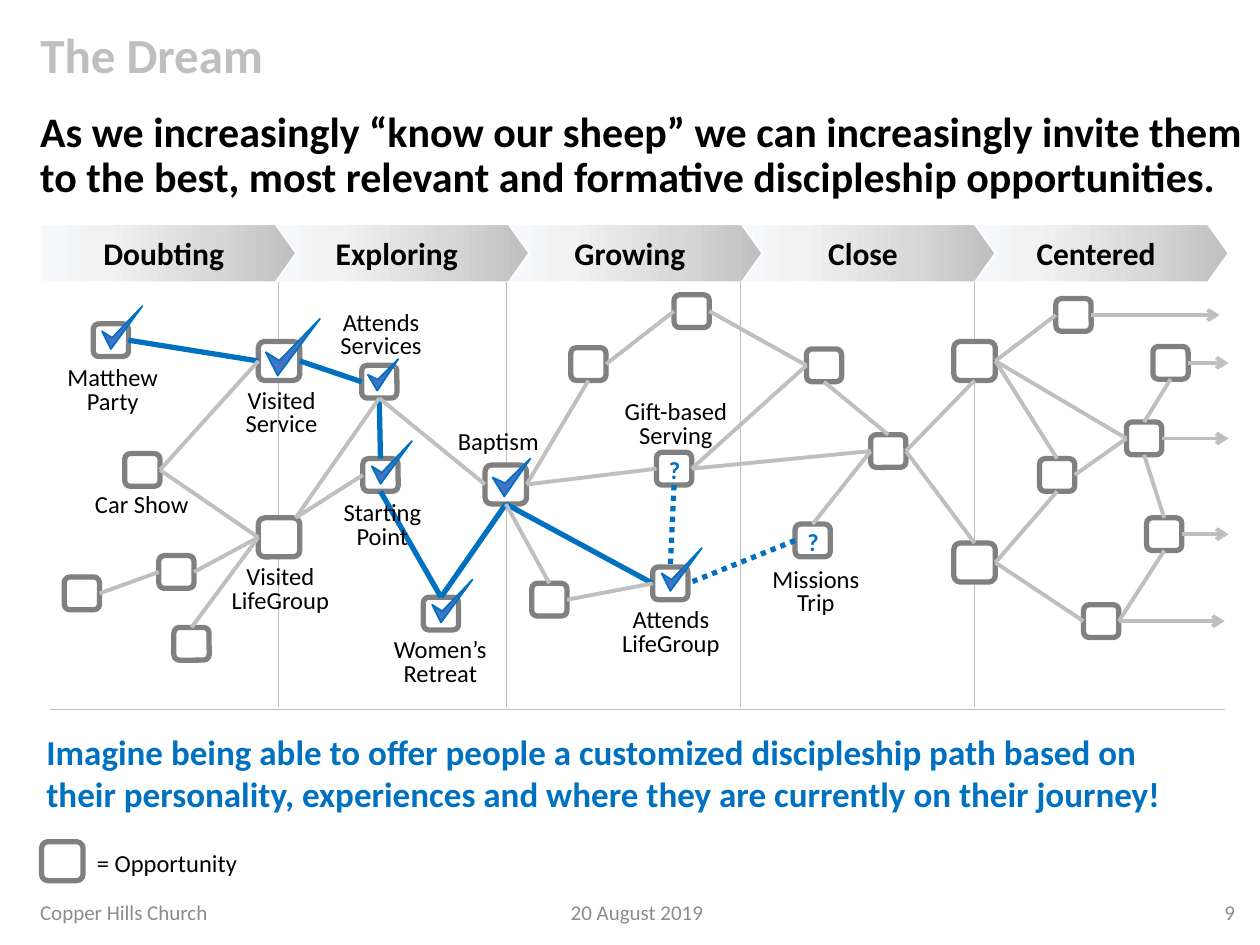
from lxml import etree
from pptx import Presentation
from pptx.dml.color import RGBColor
from pptx.enum.dml import MSO_LINE
from pptx.enum.shapes import MSO_CONNECTOR, MSO_SHAPE
from pptx.enum.text import MSO_ANCHOR, MSO_AUTO_SIZE, PP_ALIGN
from pptx.oxml.ns import qn
from pptx.util import Cm, Pt

STRAIGHT = MSO_CONNECTOR.STRAIGHT
DOTTED = MSO_LINE.ROUND_DOT
LEFT, CENTER, RIGHT = PP_ALIGN.LEFT, PP_ALIGN.CENTER, PP_ALIGN.RIGHT
TOP, MIDDLE = MSO_ANCHOR.TOP, MSO_ANCHOR.MIDDLE

THEME = {
    "font": "Calibri",
    "black": "000000", "white": "FFFFFF", "blue": "0070C0", "check": "4472C4",
    "pale": "BFBFBF", "border": "808080", "footer": "8C8C8C",
    "stage": [(0, "F6F8FC"), (25, "F2F2F2"), (66, "D9D9D9"), (100, "BFBFBF")],
    "title_size": 28, "lead_size": 24, "close_size": 20,
    "stage_size": 18, "label_size": 14, "footer_size": 12,
}

# Content; positions are in inches
TITLE = "The Dream"
LEAD = ("As we increasingly “know our sheep” we can increasingly invite them "
        "to the best, most relevant and formative discipleship opportunities.")
CLOSING = ("Imagine being able to offer people a customized discipleship path based on "
           "their personality, experiences and where they are currently on their journey!")
FOOTERS = [("Copper Hills Church", 0.22, 2.83, LEFT), ("20 August 2019", 3.93, 2.25, CENTER),
           ("9", 9.09, 0.81, RIGHT)]
STAGES = ["Doubting", "Exploring", "Growing", "Close", "Centered"]
DIVIDERS = [2.21, 4.02, 5.88, 7.73]

SMALL, LARGE = (0.28, 0.26), (0.33, 0.31)
NODES = {  # name: (left, top, size)
    "party": (0.74, 2.57, SMALL), "car_show": (0.99, 3.6, SMALL),
    "doubt_a": (0.51, 4.58, SMALL), "doubt_b": (1.26, 4.41, SMALL),
    "doubt_c": (1.38, 4.98, SMALL),
    "service": (2.05, 2.71, LARGE), "group": (2.05, 4.11, LARGE),
    "attends": (2.87, 2.9, SMALL), "start": (2.88, 3.64, SMALL),
    "retreat": (3.36, 4.74, SMALL), "baptism": (3.85, 3.69, LARGE),
    "grow_a": (4.53, 2.76, SMALL), "grow_b": (5.35, 2.34, SMALL),
    "grow_c": (4.22, 4.63, SMALL), "serving": (5.21, 3.59, SMALL),
    "life": (5.18, 4.5, SMALL), "trip": (6.31, 4.16, SMALL),
    "close_a": (6.4, 2.77, SMALL), "close_b": (6.91, 3.45, SMALL),
    "hub_a": (7.57, 2.71, LARGE), "hub_b": (7.57, 4.31, LARGE),
    "center_a": (8.38, 2.37, SMALL), "center_b": (9.15, 2.75, SMALL),
    "center_c": (8.94, 3.35, SMALL), "center_d": (8.25, 3.64, SMALL),
    "center_e": (9.1, 4.11, SMALL), "center_f": (8.6, 4.8, SMALL),
    "legend": (0.33, 6.68, LARGE),
}
LABELS = [  # text, left, top
    ("Matthew\nParty", 0.41, 2.87), ("Car Show", 0.64, 3.88),
    ("Visited\nService", 1.75, 3.05), ("Visited\nLifeGroup", 1.74, 4.45),
    ("Attends\nServices", 2.54, 2.43), ("Starting\nPoint", 2.55, 3.94),
    ("Women’s\nRetreat", 3.01, 5.03), ("Baptism", 3.47, 3.38),
    ("Gift-based\nServing", 4.88, 3.14), ("Attends\nLifeGroup", 4.84, 4.79),
    ("Missions\nTrip", 5.99, 4.47),
]
SLIM = [(0, 0.59), (0.22, 1), (1, 0), (0.25, 0.74)]
BROAD = [(0, 0.5), (0.31, 1), (1, 0), (0.33, 0.65)]
CHECKS = [  # left, top, width, height, outline
    (0.81, 2.43, 0.32, 0.34, SLIM), (2.11, 2.53, 0.43, 0.45, SLIM),
    (2.92, 2.85, 0.24, 0.25, BROAD), (2.95, 3.5, 0.32, 0.34, SLIM),
    (3.43, 4.6, 0.32, 0.34, SLIM), (3.91, 3.64, 0.3, 0.3, BROAD),
    (5.25, 4.35, 0.32, 0.34, SLIM),
]
# Each link end is a node and one of its sites
SITES = {"left": (0, 0.5), "right": (1, 0.5), "top": (0.5, 0), "bottom": (0.5, 1),
         "corner": (0.9, 0)}
TAKEN = ["party right service left", "service right attends left", "attends bottom start top",
         "start bottom retreat top", "baptism bottom retreat top", "baptism bottom life left"]
SUGGESTED = ["serving bottom life top", "trip left life right"]
POSSIBLE = [
    "car_show right service left", "car_show right group left", "attends bottom group corner",
    "start left group corner", "doubt_b right group left", "doubt_c top group left",
    "doubt_a right doubt_b left", "baptism bottom grow_c top", "life left grow_c right",
    "grow_a bottom baptism right", "grow_a right grow_b left", "close_a left grow_b right",
    "close_a left serving right", "close_b left serving right", "close_b left trip top",
    "close_a bottom close_b top", "hub_a bottom close_b right", "hub_b top close_b right",
    "center_f left hub_b right", "center_d bottom hub_b right", "center_a left hub_a right",
    "center_c left hub_a right", "center_d top hub_a right", "center_d right center_c left",
    "center_b bottom center_c top", "center_e top center_c bottom",
    "center_f right center_e bottom", "baptism right serving left", "attends bottom baptism left",
]
ONWARD = {"center_a": 9.68, "center_b": 9.75, "center_c": 9.75, "center_e": 9.75,
          "center_f": 9.72}


def inches(*values):
    return [Cm(value * 2.54) for value in values]


def color(name):
    return RGBColor.from_string(THEME.get(name, name))


def write(shape, text, size, tint="black", bold=False, align=LEFT, anchor=TOP,
          wrap=True, spacing=None):
    frame = shape.text_frame
    frame.word_wrap = wrap
    frame.auto_size = MSO_AUTO_SIZE.NONE
    frame.vertical_anchor = anchor
    para = frame.paragraphs[0]
    para.text = text
    para.alignment = align
    if spacing:
        para.line_spacing = spacing
    para.font.name = THEME["font"]
    para.font.size = Pt(THEME[size])
    para.font.bold = bold
    para.font.color.rgb = color(tint)


def add_text(text, place, size, **style):
    write(slide.shapes.add_textbox(*inches(*place)), text, size, **style)


def paint(shape, fill, line, width):
    shape.shadow.inherit = False
    shape.fill.solid()
    shape.fill.fore_color.rgb = color(fill)
    shape.line.color.rgb = color(line)
    shape.line.width = Pt(width)


def add_line(start, end, tint, width, dash=None, arrow=False):
    line = slide.shapes.add_connector(STRAIGHT, *inches(*start, *end))
    line.line.color.rgb = color(tint)
    line.line.width = Pt(width)
    if dash:
        line.line.dash_style = dash
    properties = line._element.spPr
    if arrow:
        etree.SubElement(properties.find(qn("a:ln")), qn("a:tailEnd"), type="arrow")
    etree.SubElement(properties, qn("a:effectLst"))


def site(name, side):
    left, top, (width, height) = NODES[name]
    across, down = SITES[side]
    return left + across * width, top + down * height


def add_links(links, tint, width, dash=None):
    for link in links:
        first, first_side, second, second_side = link.split()
        add_line(site(first, first_side), site(second, second_side), tint, width, dash)


deck = Presentation()
deck.slide_width, deck.slide_height = inches(10, 7.5)
slide = deck.slides.add_slide(deck.slide_layouts[5])

# Title, lead and footer
title = slide.shapes.title
title.left, title.top, title.width, title.height = inches(0.22, 0.27, 6.44, 0.41)
write(title, TITLE, "title_size", tint="pale", bold=True, anchor=MIDDLE, spacing=0.8)
add_text(LEAD, (0.22, 0.83, 9.78, 0.88), "lead_size", bold=True, spacing=0.9)
for text, left, width, align in FOOTERS:
    add_text(text, (left, 7.11, width, 0.26), "footer_size", tint="footer", align=align,
             anchor=MIDDLE)

# Stage arrows, each overlapping the next
for index, name in reversed(list(enumerate(STAGES))):
    stage = slide.shapes.add_shape(MSO_SHAPE.PENTAGON,
                                   *inches(0.33 + 1.85 * index, 1.78, 2.02, 0.46))
    stage.adjustments[0] = 0.356
    paint(stage, "white", "white", 1)
    stage.fill.gradient()
    stage.fill.gradient_angle = 0
    stops = stage._element.spPr.find(qn("a:gradFill")).find(qn("a:gsLst"))
    stops.clear()
    for position, tint in THEME["stage"]:
        stop = etree.SubElement(stops, qn("a:gs"), pos=str(position * 1000))
        etree.SubElement(stop, qn("a:srgbClr"), val=tint)
    write(stage, name, "stage_size", bold=True, align=CENTER, anchor=MIDDLE, wrap=False)
for x in DIVIDERS:
    add_line((x, 2.24), (x, 5.61), "pale", 0.5)
add_line((0.4, 5.63), (9.72, 5.63), "pale", 0.5)

# Opportunities and check marks
for left, top, size in NODES.values():
    node = slide.shapes.add_shape(MSO_SHAPE.ROUNDED_RECTANGLE, *inches(left, top, *size))
    paint(node, "white", "border", 3)
for left, top, width, height, outline in CHECKS:
    points = [inches(left + x * width, top + y * height) for x, y in outline]
    builder = slide.shapes.build_freeform(*points[0])
    builder.add_line_segments(points[1:], close=True)
    paint(builder.convert_to_shape(), "check", "blue", 1)

# Paths and labels
add_links(TAKEN, "blue", 3)
add_links(SUGGESTED, "blue", 3, DOTTED)
for text, left, top in LABELS:
    add_text(text, (left, top, 0.97, 0.48), "label_size", align=CENTER, wrap=False, spacing=0.8)
for name in ("serving", "trip"):
    left, top, size = NODES[name]
    add_text("?", (left, top - 0.03, 0.25, 0.28), "label_size", tint="blue", bold=True)
add_links(POSSIBLE, "pale", 2.25)
for name, end in ONWARD.items():
    start = site(name, "right")
    add_line(start, (end, start[1]), "pale", 2.25, arrow=True)

# Closing statement and legend
add_text(CLOSING, (0.27, 5.75, 9.33, 0.77), "close_size", tint="blue", bold=True)
add_text("= Opportunity", (0.67, 6.68, 1.93, 0.36), "label_size", wrap=False)

deck.save("out.pptx")
